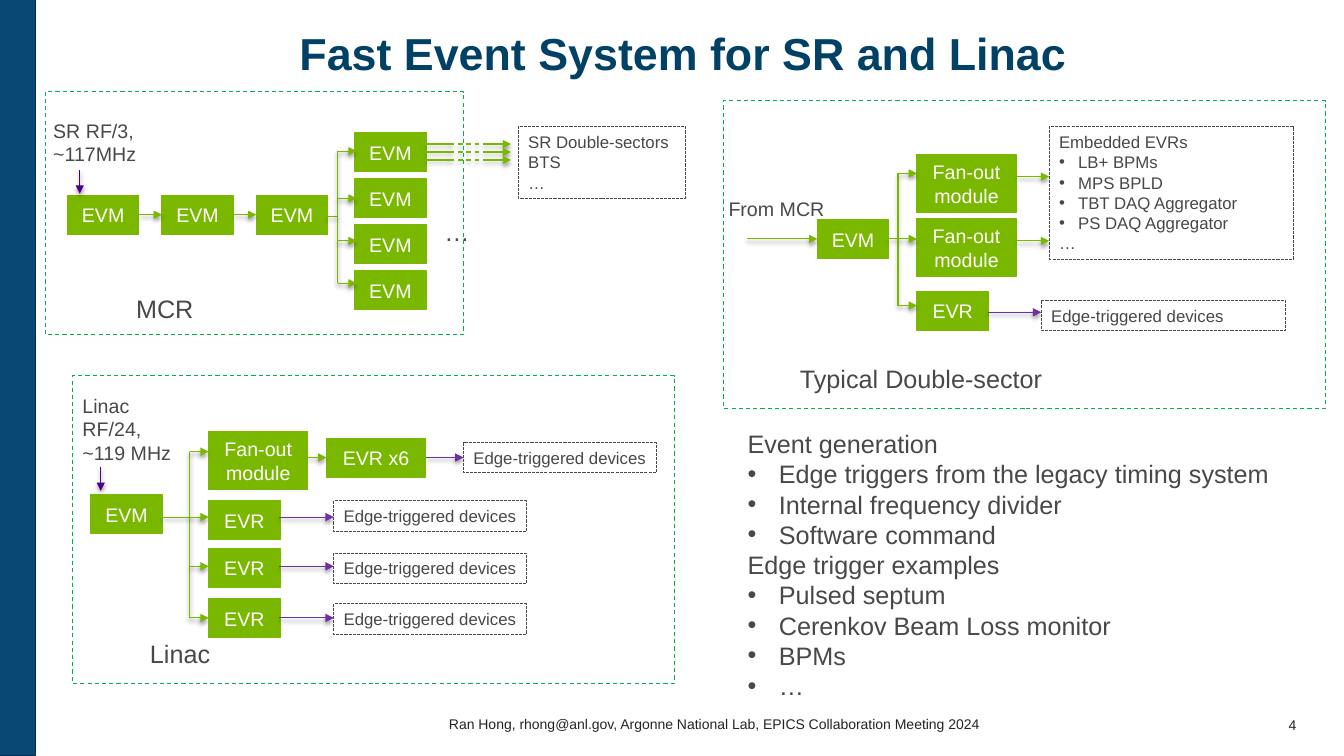
from dataclasses import dataclass

from lxml.etree import SubElement as Sub
from pptx import Presentation
from pptx.dml.color import RGBColor as RGB
from pptx.enum.dml import MSO_LINE as Dash
from pptx.enum.shapes import MSO_CONNECTOR as Conn, MSO_SHAPE as Kind
from pptx.enum.text import MSO_ANCHOR as Anchor, PP_ALIGN as Align
from pptx.oxml.ns import qn
from pptx.util import Cm, Pt


@dataclass(frozen=True)
class Theme:
    """Colours, font and type sizes of the slide."""
    font: str = "Arial"
    navy: str = "004165"
    bar: str = "094875"
    edge: str = "00304E"
    green: str = "7AB800"
    frame: str = "00B050"
    violet: str = "7030A0"
    indigo: str = "4D008C"
    gray: str = "47484A"
    foot: str = "232425"
    white: str = "FFFFFF"
    title: int = 32
    label: int = 18
    block: int = 14
    note: int = 12
    small: int = 10


T = Theme()
BOX_W, BOX_H, FAN_W, FAN_H, ROW_H = 1.8, 0.98, 2.5, 1.47, 0.77
DEVICE = "Edge-triggered devices"


def write(frame, lines, size, color, align=Align.LEFT, indent=0.48, bold=False):
    """Fill a text frame; lines that start with a bullet get a hanging indent."""
    frame.text = "\n".join(line.lstrip("•") for line in lines)
    for para, line in zip(frame.paragraphs, lines):
        para.alignment = align
        if line.startswith("•"):
            props = para._p.get_or_add_pPr()
            props.set("marL", str(Cm(indent)))
            props.set("indent", str(-Cm(indent)))
            Sub(props, qn("a:buFont")).set("typeface", T.font)
            Sub(props, qn("a:buChar")).set("char", "•")
        for run in para.runs:
            font = run.font
            font.name, font.size, font.bold = T.font, Pt(size), bold
            font.color.rgb = RGB.from_string(color)


class Panel:
    """Draws parts at offsets in centimetres from the corner of a box."""

    def __init__(self, slide, box):
        """Keep the shapes of the slide and the box."""
        self.shapes = slide.shapes
        self.x, self.y, self.w, self.h = box

    def place(self, x, y, w, h):
        """Turn an offset and a size into slide lengths."""
        return Cm(self.x + x), Cm(self.y + y), Cm(w), Cm(h)

    def rect(self, x, y, w, h, line, fill=None, dash=None):
        """Add a rectangle, hollow unless a fill is given."""
        shape = self.shapes.add_shape(Kind.RECTANGLE, *self.place(x, y, w, h))
        shape.shadow.inherit = False
        shape.line.color.rgb = RGB.from_string(line)
        shape.line.width = Pt(0.75)
        if dash:
            shape.line.dash_style = dash
        if fill:
            shape.fill.solid()
            shape.fill.fore_color.rgb = RGB.from_string(fill)
        else:
            shape.fill.background()
        return shape

    def frame(self):
        """Outline the whole box with dashes."""
        self.rect(0, 0, self.w, self.h, T.frame, dash=Dash.DASH)

    def block(self, text, x, y, w=BOX_W, h=BOX_H):
        """Add a green block with a centred name."""
        shape = self.rect(x, y, w, h, T.green, T.green)
        shape.text_frame.vertical_anchor = Anchor.MIDDLE
        write(shape.text_frame, [text], T.block, T.white, Align.CENTER)

    def note(self, lines, x, y, w, h=ROW_H):
        """Add a dotted box with small text."""
        shape = self.rect(x, y, w, h, T.gray, dash=Dash.SQUARE_DOT)
        shape.text_frame.vertical_anchor = Anchor.TOP
        write(shape.text_frame, lines, T.note, T.gray)

    def text(self, lines, x, y, w, h, size=T.label, color=T.gray, wrap=True, **style):
        """Add a text box."""
        frame = self.shapes.add_textbox(*self.place(x, y, w, h)).text_frame
        frame.word_wrap = wrap
        write(frame, lines, size, color, **style)
        return frame

    def line(self, x1, y1, x2, y2, color=T.green, head=True, dash=None):
        """Add a shadowed line, with an arrowhead at its end if wanted."""
        start, end = self.place(x1, y1, x2, y2)[:2], self.place(x2, y2, 0, 0)[:2]
        wire = self.shapes.add_connector(Conn.STRAIGHT, *start, *end)
        wire.line.color.rgb = RGB.from_string(color)
        wire.line.width = Pt(0.85)
        if dash:
            wire.line.dash_style = dash
        props = wire._element.spPr
        if head:
            Sub(props.find(qn("a:ln")), qn("a:tailEnd")).set("type", "triangle")
        cast = Sub(Sub(props, qn("a:effectLst")), qn("a:outerShdw"))
        for key, value in (("blurRad", Pt(3)), ("dist", Pt(2)), ("dir", 5400000), ("rotWithShape", 0)):
            cast.set(key, str(value))
        tint = Sub(cast, qn("a:srgbClr"))
        tint.set("val", "000000")
        Sub(tint, qn("a:alpha")).set("val", "40000")

    def tree(self, start, trunk, end, mid, rows):
        """Split one line into an arrow for each row."""
        self.line(start, mid, trunk, mid, head=False)
        self.line(trunk, rows[0], trunk, rows[-1], head=False)
        for y in rows:
            self.line(trunk, y, end, y)


def draw_mcr(slide, box):
    """Draw the control room chain and its outputs."""
    pane = Panel(slide, box)
    left, top, step = 0.56, 2.62, 2.38
    for i in range(3):
        pane.block("EVM", left + i * step, top)
    for i in range(2):
        pane.line(left + BOX_W + i * step, 3.1, left + (i + 1) * step, 3.1)
    for i in range(4):
        pane.block("EVM", 7.8, 1.04 + 1.16 * i)
    pane.tree(7.06, 7.37, 7.85, 3.15, [1.5, 2.69, 3.76, 4.83])
    for i in range(3):
        y = 1.32 + 0.2 * i
        pane.line(9.58, y, 10.19, y, head=False)
        pane.line(10.19, y, 11.08, y, head=False, dash=Dash.DASH)
        pane.line(11.08, y, 11.74, y)
    pane.line(0.87, 1.98, 0.87, 2.57, T.indigo)
    pane.text(["SR RF/3, ~117MHz"], -0.05, 0.56, 2.62, 1.45, T.block)
    pane.text(["…"], 9.81, 3.02, 1.14, 1.02, wrap=False)
    pane.note(["SR Double-sectors", "BTS", "…"], 11.92, 0.89, 4.22, 1.8)
    pane.frame()
    pane.text(["MCR"], 2.04, 4.95, 1.98, 1.02, wrap=False)


def draw_sector(slide, box):
    """Draw the typical double-sector."""
    pane = Panel(slide, box)
    pane.block("EVM", 2.36, 3)
    for y, out in ((1.35, 1.91), (2.97, 3.53)):
        pane.block("Fan-out module", 4.87, y, FAN_W, FAN_H)
        pane.line(7.36, out, 8.2, out)
    pane.block("EVR", 4.87, 4.8)
    pane.line(0.58, 3.48, 2.36, 3.48)
    pane.tree(4.14, 4.39, 4.87, 3.48, [1.83, 3.48, 5.16])
    parts = ["Embedded EVRs", "•LB+ BPMs", "•MPS BPLD", "•TBT DAQ Aggregator", "•PS DAQ Aggregator", "…"]
    pane.note(parts, 8.2, 0.66, 6.15, 3.33)
    pane.note([DEVICE], 8, 5.03, 6.15)
    pane.line(6.65, 5.33, 8, 5.33, T.violet)
    pane.frame()
    pane.text(["Typical Double-sector"], 1.67, 6.5, 9.7, 1.02)
    pane.text(["From MCR"], -0.13, 2.31, 2.95, 0.86, T.block, wrap=False)


def draw_linac(slide, box):
    """Draw the linac tree."""
    pane = Panel(slide, box)
    pane.block("EVM", 0.46, 3)
    pane.block("Fan-out module", 3.43, 1.4, FAN_W, FAN_H)
    pane.block("EVR x6", 6.4, 1.58, FAN_W)
    pane.line(5.92, 2.06, 6.4, 2.06)
    pane.line(8.91, 2.06, 9.85, 2.06, T.violet)
    pane.note([DEVICE], 9.85, 1.68, 4.86)
    rows = [3.56, 4.8, 6.1]
    pane.tree(2.24, 2.95, 3.43, rows[0], [1.91, *rows])
    for y, top, side in zip(rows, (3.15, 4.35, 5.62), (3.15, 4.47, 5.74)):
        pane.block("EVR", 3.43, top)
        pane.line(5.21, y, 6.58, y, T.violet)
        pane.note([DEVICE], 6.58, side, 4.86)
    pane.frame()
    pane.text(["Linac"], 1.7, 6.5, 9.7, 1.02)
    pane.line(0.71, 2.29, 0.71, 2.9, T.indigo)
    pane.text(["Linac RF/24, ~119 MHz"], 0, 0.33, 3.15, 2.06, T.block)


def draw_list(slide, box):
    """Write the list of event sources and triggers."""
    pane = Panel(slide, box)
    lines = ["Event generation", "•Edge triggers from the legacy timing system",
             "•Internal frequency divider", "•Software command", "Edge trigger examples",
             "•Pulsed septum", "•Cerenkov Beam Loss monitor", "•BPMs", "•…"]
    pane.text(lines, 0, 0, pane.w, pane.h, indent=0.79)


def draw_base(slide, box):
    """Draw the side bar, title, footer and page number."""
    pane = Panel(slide, box)
    pane.rect(0, 0, 0.89, pane.h, T.edge, T.bar)
    title = slide.shapes.title
    title.left, title.top, title.width, title.height = pane.place(1.14, 0.18, 32.16, 2.31)
    body = title.text_frame
    body.margin_left = body.margin_right = body.margin_top = body.margin_bottom = 0
    body.vertical_anchor = Anchor.MIDDLE
    write(body, ["Fast Event System for SR and Linac"], T.title, T.navy, Align.CENTER, bold=True)
    credit = "Ran Hong, rhong@anl.gov, Argonne National Lab, EPICS Collaboration Meeting 2024"
    foot = pane.text([credit], 5.36, 17.93, 25.27, 0.61, T.small, T.foot, align=Align.CENTER)
    foot.vertical_anchor = Anchor.MIDDLE
    page = pane.text(["4"], 31.72, 17.98, 1.7, 0.51, T.small, T.foot, align=Align.CENTER)
    page.margin_left = page.margin_right = page.margin_bottom = 0
    page.vertical_anchor = Anchor.BOTTOM


def main():
    """Build and save the slide."""
    deck = Presentation()
    deck.slide_width, deck.slide_height = Cm(33.87), Cm(19.05)
    slide = deck.slides.add_slide(deck.slide_layouts[5])
    draw_base(slide, (0, 0, 33.87, 19.05))
    draw_mcr(slide, (1.14, 2.31, 10.54, 6.12))
    draw_sector(slide, (18.24, 2.54, 15.16, 7.75))
    draw_linac(slide, (1.83, 9.47, 15.16, 7.75))
    draw_list(slide, (18.59, 10.67, 13.8, 7.19))
    deck.save("out.pptx")


if __name__ == "__main__":
    main()
